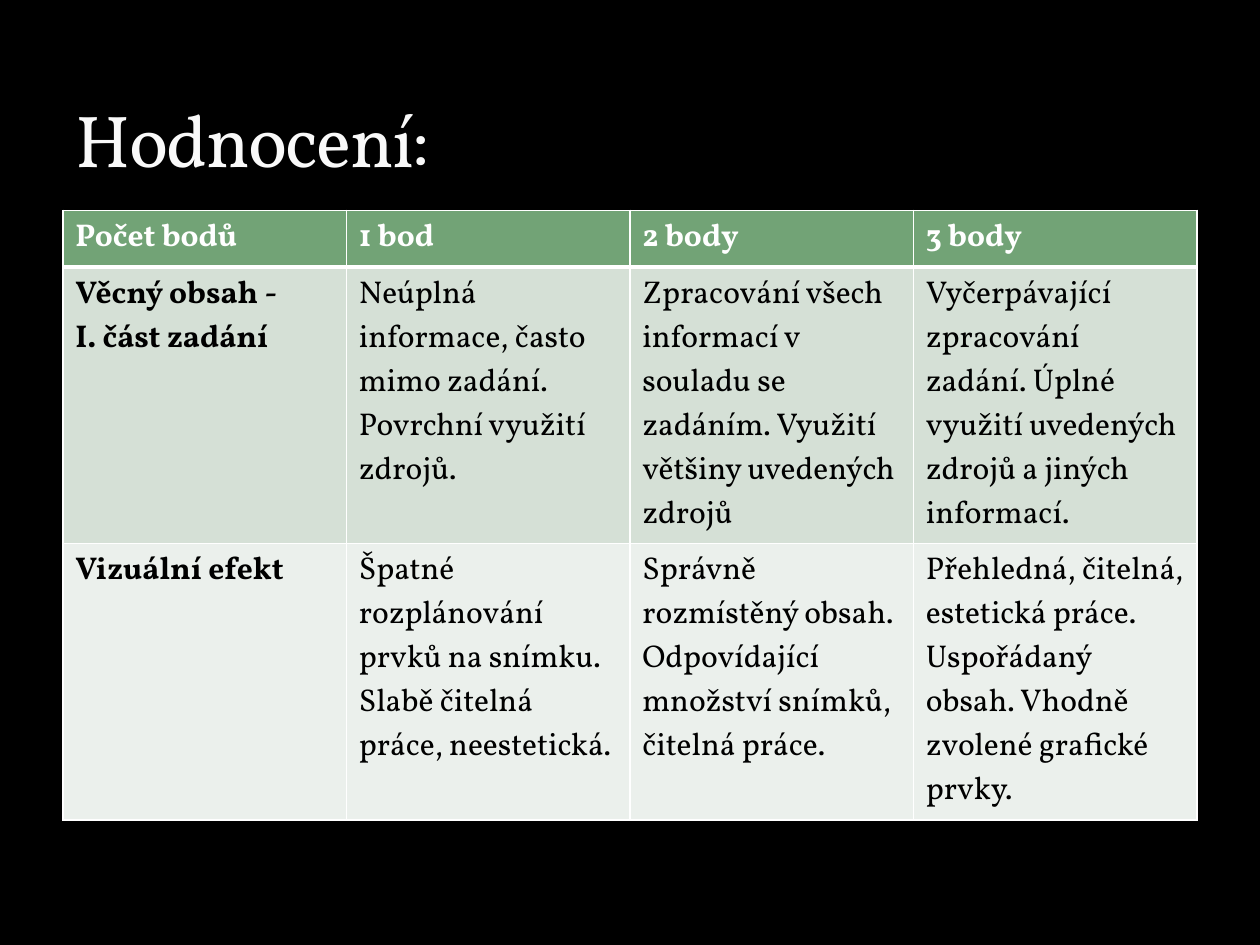
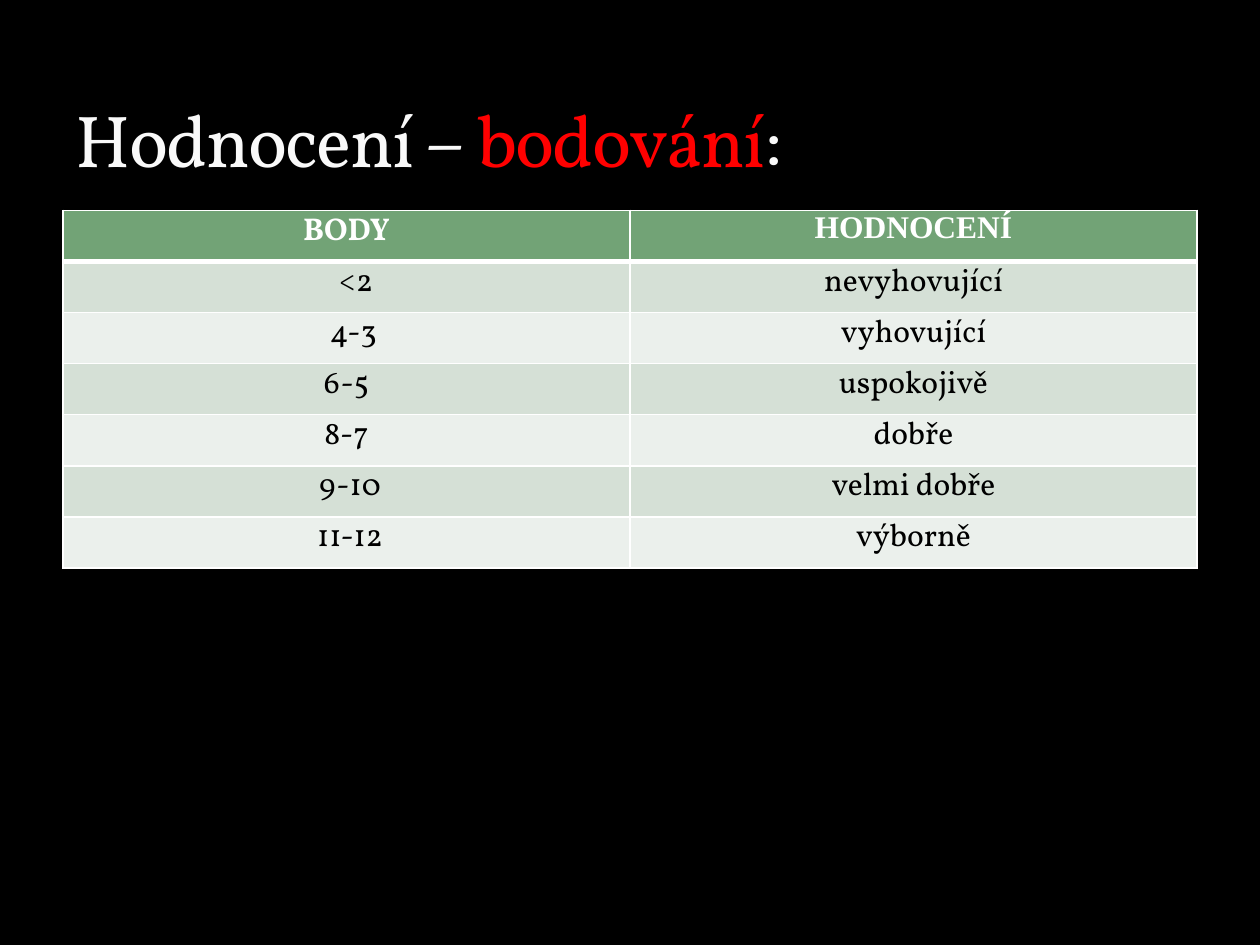
from lxml import etree
from pptx import Presentation
from pptx.dml.color import RGBColor
from pptx.enum.text import MSO_ANCHOR, MSO_AUTO_SIZE, PP_ALIGN
from pptx.oxml.ns import qn
from pptx.util import Cm, Pt

BLACK = RGBColor(0x00, 0x00, 0x00)
WHITE = RGBColor(0xFF, 0xFF, 0xFF)
TITLE_WHITE = RGBColor(0xF9, 0xF9, 0xF9)
RED = RGBColor(0xFF, 0x00, 0x00)
HEADER_GREEN = RGBColor(0x72, 0xA3, 0x76)
BAND_COLORS = [RGBColor(0xEB, 0xF0, 0xEC), RGBColor(0xD5, 0xE0, 0xD6)]

FONT = "Vollkorn"
HEADER_FONTS = {"HODNOCENÍ": "Times New Roman"}
TITLE_FORMAT = {"name": FONT, "size": Pt(42)}
TITLE_FRAME = {"left": Cm(1.27), "top": Cm(0.43), "width": Cm(22.86), "height": Cm(3.38)}
TABLE_LEFT, TABLE_TOP, TABLE_WIDTH = Cm(1.27), Cm(4.24), Cm(22.86)

SLIDES = [
    {
        "title": [("Hodnocení:", TITLE_WHITE)],
        "rows": [
            ["Počet bodů", "1 bod", "2 body", "3 body"],
            ["Věcný obsah -\nI. část zadání",
             "Neúplná informace, často mimo zadání. Povrchní využití zdrojů.",
             "Zpracování všech informací v souladu se zadáním. Využití většiny uvedených zdrojů",
             "Vyčerpávající zpracování zadání. Úplné využití uvedených zdrojů a jiných informací."],
            ["Vizuální efekt",
             "Špatné rozplánování prvků na snímku. Slabě čitelná práce, neestetická.",
             "Správně rozmístěný obsah. Odpovídající množství snímků, čitelná práce.",
             "Přehledná, čitelná, estetická práce. Uspořádaný obsah. Vhodně zvolené grafické prvky."],
        ],
        "heights": [Cm(1.13), Cm(5.56), Cm(5.56)],
        "align": PP_ALIGN.LEFT,
        "margins": {"margin_left": Cm(0.25), "margin_right": Cm(0.25),
                    "margin_top": Cm(0.13), "margin_bottom": Cm(0.13)},
        "bold_first_column": True,
        "indents": {},
    },
    {
        "title": [("Hodnocení – ", TITLE_WHITE), ("bodování", RED), (":", TITLE_WHITE)],
        "rows": [
            ["BODY", "HODNOCENÍ"],
            ["<2", "nevyhovující"],
            ["4-3", "vyhovující"],
            ["6-5", "uspokojivě"],
            ["8-7", "dobře"],
            ["9-10", "velmi dobře"],
            ["11-12", "výborně"],
        ],
        "heights": [Cm(1.03)] * 7,
        "align": PP_ALIGN.CENTER,
        "margins": {"margin_left": Cm(0.18), "margin_right": Cm(0.18),
                    "margin_top": 0, "margin_bottom": 0},
        "bold_first_column": False,
        "indents": {"<2": Cm(0.38), "4-3": Cm(0.28), "9-10": Cm(0.14), "11-12": Cm(0.14)},
    },
]


def set_format(target, values):
    for name, value in values.items():
        setattr(target, name, value)


def add_borders(cell, row_index):
    """Draw white cell borders, with a thick rule under the header row."""
    widths = {"lnL": 1, "lnR": 1,
              "lnT": 3 if row_index == 1 else 1,
              "lnB": 3 if row_index == 0 else 1}
    properties = cell._tc.get_or_add_tcPr()
    for side, width in widths.items():
        line = etree.SubElement(properties, qn(f"a:{side}"), w=str(Pt(width)))
        fill = etree.SubElement(line, qn("a:solidFill"))
        etree.SubElement(fill, qn("a:srgbClr"), val=str(WHITE))


presentation = Presentation()
presentation.slide_width, presentation.slide_height = Cm(25.4), Cm(19.05)
background = presentation.slide_master.background.fill
background.solid()
background.fore_color.rgb = BLACK
title_only = presentation.slide_layouts.get_by_name("Title Only")

for content in SLIDES:
    slide = presentation.slides.add_slide(title_only)

    title = slide.shapes.title
    set_format(title, TITLE_FRAME)
    set_format(title.text_frame, {"vertical_anchor": MSO_ANCHOR.BOTTOM,
                                  "auto_size": MSO_AUTO_SIZE.NONE, "word_wrap": True})
    paragraph = title.text_frame.paragraphs[0]
    paragraph.alignment = PP_ALIGN.LEFT
    for text, color in content["title"]:
        run = paragraph.add_run()
        run.text = text
        set_format(run.font, TITLE_FORMAT)
        run.font.color.rgb = color
        run.font._element.set("spc", "-100")

    rows, heights = content["rows"], content["heights"]
    table = slide.shapes.add_table(len(rows), len(rows[0]), TABLE_LEFT, TABLE_TOP,
                                   TABLE_WIDTH, sum(heights)).table
    for row_index, texts in enumerate(rows):
        table.rows[row_index].height = heights[row_index]
        is_header = row_index == 0
        for column_index, text in enumerate(texts):
            cell = table.cell(row_index, column_index)
            cell.text = text
            set_format(cell, content["margins"])
            cell.margin_left += content["indents"].get(text, 0)
            add_borders(cell, row_index)
            cell.fill.solid()
            cell.fill.fore_color.rgb = HEADER_GREEN if is_header else BAND_COLORS[row_index % 2]
            is_label = content["bold_first_column"] and column_index == 0
            for paragraph in cell.text_frame.paragraphs:
                paragraph.alignment = content["align"]
                font = paragraph.runs[0].font
                set_format(font, {"name": HEADER_FONTS.get(text, FONT), "size": Pt(18),
                                  "bold": is_header or is_label})
                font.color.rgb = WHITE if is_header else BLACK

presentation.save("out.pptx")
